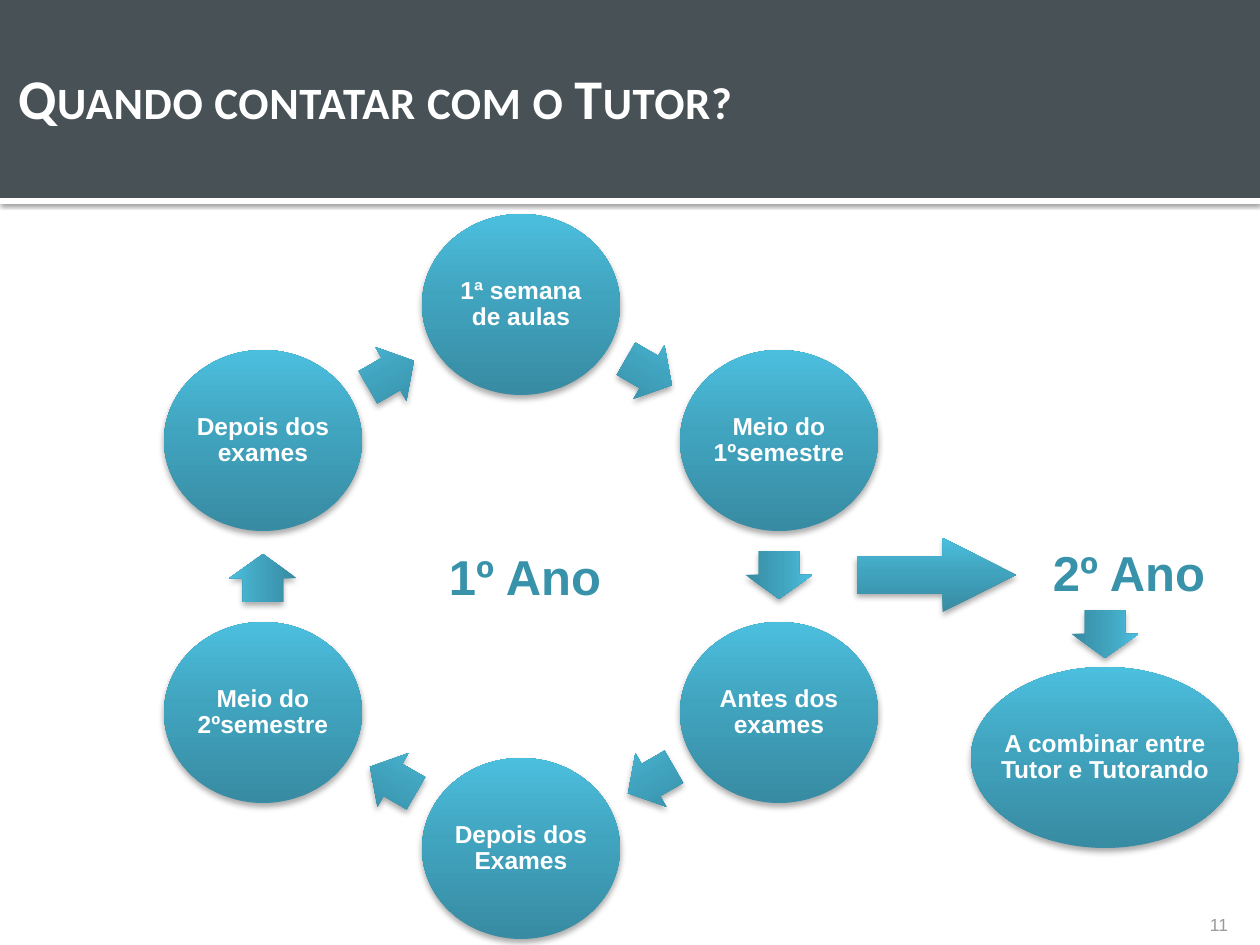
"""Build the slide on when students should contact their tutor."""
from copy import deepcopy

from lxml import etree
from pptx import Presentation
from pptx.dml.color import RGBColor
from pptx.enum.shapes import MSO_SHAPE
from pptx.enum.text import MSO_ANCHOR, PP_ALIGN
from pptx.oxml.ns import qn
from pptx.util import Pt

OVAL, RECTANGLE = MSO_SHAPE.OVAL, MSO_SHAPE.RECTANGLE
RIGHT, LEFT = MSO_SHAPE.RIGHT_ARROW, MSO_SHAPE.LEFT_ARROW
MIDDLE, BOTTOM = MSO_ANCHOR.MIDDLE, MSO_ANCHOR.BOTTOM
CENTER, ALIGN_LEFT, ALIGN_RIGHT = PP_ALIGN.CENTER, PP_ALIGN.LEFT, PP_ALIGN.RIGHT
SCALE = 914400 / 126
STOPS = [(0, "378BA2"), (0.55, "41A4BF"), (1, "4BBFDE")]
color = RGBColor.from_string


def add_figure(shapes, kind, bounds, fill=None, shadow=(32, 3.5, 2.2)):
    shape = shapes.add_shape(kind, *[round(value * SCALE) for value in bounds])
    shape.line.fill.background()
    if fill:
        shape.fill.solid()
        shape.fill.fore_color.rgb = color(fill)
    else:
        shape.fill.gradient()
        shape.fill.gradient_angle = 90
        stop_list = shape._element.spPr.find(".//" + qn("a:gsLst"))
        stop_list.append(deepcopy(stop_list[0]))
        for stop, (position, shade) in zip(shape.fill.gradient_stops, STOPS):
            stop.position = position
            stop.color.rgb = color(shade)
    shape.shadow.inherit = False
    if shadow:
        alpha, blur, distance = shadow
        effects = shape._element.spPr.find(qn("a:effectLst"))
        outer = etree.SubElement(effects, qn("a:outerShdw"), blurRad=str(Pt(blur)),
                                 dist=str(Pt(distance)), dir="5400000", rotWithShape="0")
        tone = etree.SubElement(outer, qn("a:srgbClr"), val="000000")
        etree.SubElement(tone, qn("a:alpha"), val=str(alpha * 1000))
    return shape


def write(shape, text, size, shade, align, anchor, margins, bold=True, font="Arial"):
    frame = shape.text_frame
    frame.word_wrap = True
    frame.vertical_anchor = anchor
    frame.margin_left, frame.margin_top, frame.margin_right, frame.margin_bottom = [
        round(value * SCALE) for value in margins]
    para = frame.paragraphs[0]
    para.alignment = align
    span = para.add_run()
    span.text = text
    span.font.name, span.font.size, span.font.bold = font, Pt(size), bold
    span.font.color.rgb = color(shade)
    return para


deck = Presentation()
deck.slide_width, deck.slide_height = round(1260 * SCALE), round(945 * SCALE)
page = deck.slides.add_slide(deck.slide_layouts[5])

add_figure(page.shapes, RECTANGLE, (0, 198, 1260, 6), "FFFFFF", (60, 2.5, 0.8))
add_figure(page.shapes, RECTANGLE, (0, 0, 1260, 198), "485156", None)

title = page.shapes.title
page.shapes._spTree.append(title._element)
title.left, title.top, title.width, title.height = [
    round(value * SCALE) for value in (5, 37, 1211, 120)]
heading = write(title, "Quando contatar com o Tutor?", 32, "FFFFFF", ALIGN_LEFT,
                MIDDLE, (13, 6, 6, 6), font="Calibri")
heading_format = heading.runs[0]._r.get_or_add_rPr()
heading_format.set("cap", "small")
heading_format.set("spc", "40")

cycle = page.shapes.add_group_shape()
stages = [
    (cycle, "1ª semana de aulas", 422, 214, 198, 0),
    (cycle, "Meio do 1ºsemestre", 680, 350, 198, 0),
    (cycle, "Antes dos exames", 680, 622, 198, 0),
    (cycle, "Depois dos Exames", 422, 758, 198, 0),
    (cycle, "Meio do 2ºsemestre", 164, 622, 198, 0),
    (cycle, "Depois dos exames", 164, 350, 198, 0),
    (page, "A combinar entre Tutor e Tutorando", 971, 667, 268, -12),
]
for parent, text, left, top, width, margin in stages:
    oval = add_figure(parent.shapes, OVAL, (left, top, width, 181))
    para = write(oval, text, 14, "FFFFFF", CENTER, MIDDLE, (margin, 0, margin, 0))
    para.line_spacing = 0.9
    para.space_after = Pt(7)

arrows = [
    (cycle, RIGHT, 649, 372, 53, 62, 30),
    (cycle, RIGHT, 779, 575, 48, 67, 90),
    (cycle, LEFT, 651, 780, 53, 62, 330),
    (cycle, LEFT, 393, 780, 53, 62, 30),
    (cycle, RIGHT, 263, 578, 48, 67, 270),
    (cycle, RIGHT, 391, 374, 53, 62, 330),
    (page, RIGHT, 1105, 634, 48, 67, 90),
]
for parent, kind, x, y, width, height, angle in arrows:
    arrow = add_figure(parent.shapes, kind, (x - width / 2, y - height / 2, width, height))
    arrow.rotation = angle
    arrow.adjustments[0], arrow.adjustments[1] = 0.6, 0.5

next_year = add_figure(page.shapes, RIGHT, (857, 538, 159, 74))
next_year.adjustments[0], next_year.adjustments[1] = 0.5, 0.99

labels = [
    ("2º Ano", (1040, 536, 189, 72), 28, "3792AA", ALIGN_LEFT, MIDDLE, (13, 6, 13, 6), True),
    ("1º Ano", (436, 540, 194, 72), 28, "3792AA", ALIGN_LEFT, MIDDLE, (13, 6, 13, 6), True),
    ("11", (1124, 885, 104, 50), 10, "9B9A98", ALIGN_RIGHT, BOTTOM, (0, 0, 0, 0), False),
]
for text, bounds, *style in labels:
    box = page.shapes.add_textbox(*[round(value * SCALE) for value in bounds])
    write(box, text, *style)

deck.save("out.pptx")
